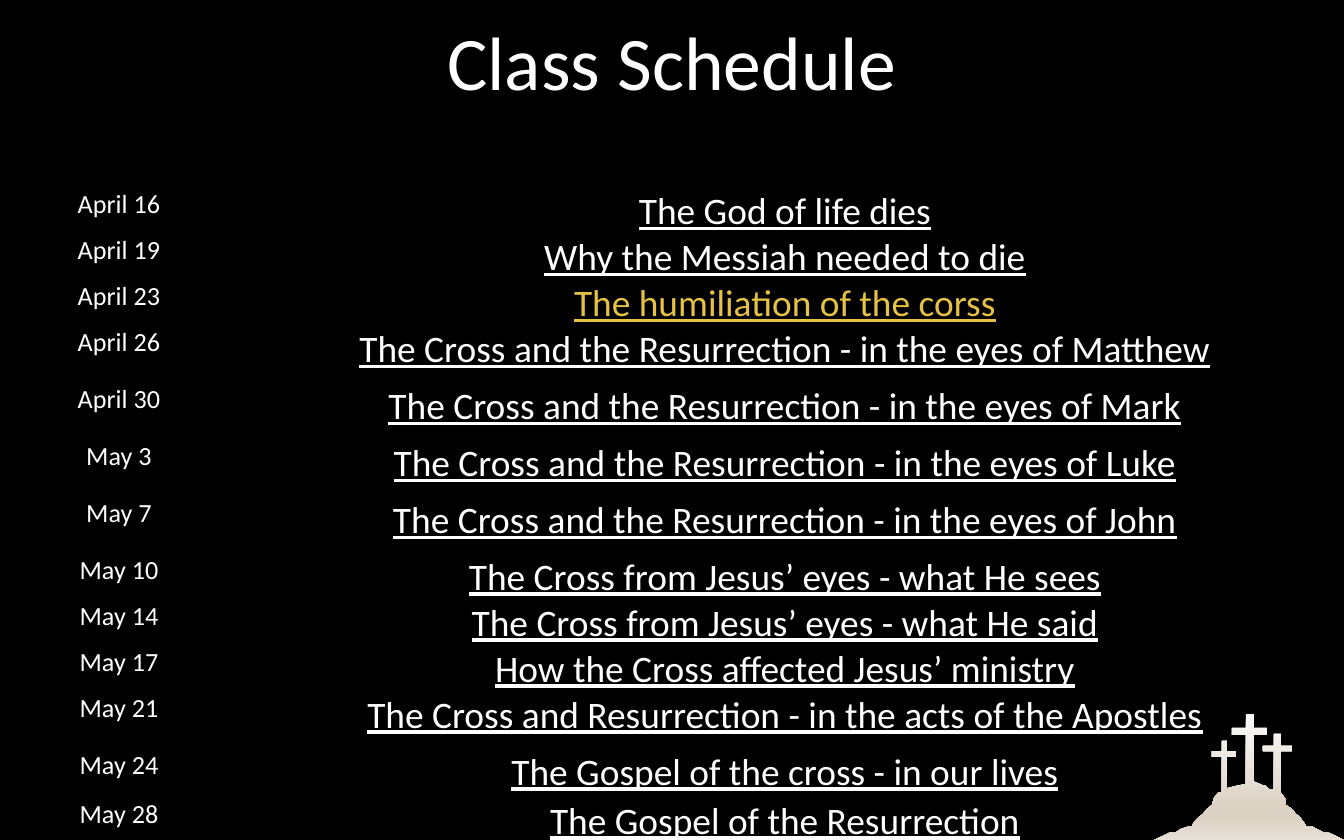
import pptx
import pptx.util
import pptx.dml.color
import pptx.enum.text
import pptx.oxml
import pptx.oxml.ns

PX = 914400 / 134.4
qn = pptx.oxml.ns.qn
NS = pptx.oxml.ns.nsdecls("a")
WHITE, BLACK, GOLD = "FFFFFF", "000000", "E5C243"


def rgb(value):
    return pptx.dml.color.RGBColor.from_string(value)


def write(tf, text, **font):
    p = tf.paragraphs[0]
    p.alignment = pptx.enum.text.PP_ALIGN.CENTER
    r = p.add_run()
    r.text = text
    r.font.color.rgb = rgb(font.pop("color", WHITE))
    for name, value in {"name": "Calibri", **font}.items():
        setattr(r.font, name, value)
    return p


prs = pptx.Presentation()
prs.slide_width, prs.slide_height = round(1344 * PX), round(840 * PX)
s = prs.slides.add_slide(prs.slide_layouts[6])
s.background.fill.solid()
s.background.fill.fore_color.rgb = rgb(BLACK)

tf = s.shapes.add_textbox(0, 0, prs.slide_width, round(132 * PX)).text_frame
tf.word_wrap = True
tf.vertical_anchor = pptx.enum.text.MSO_ANCHOR.MIDDLE
write(tf, "Class Schedule", size=pptx.util.Pt(40.5)).line_spacing = 0.9

TALL, SHORT, LAST = 57, 46, 49
rows = [
    (TALL, "", ""),
    (SHORT, "April 16", "The God of life dies"),
    (SHORT, "April 19", "Why the Messiah needed to die"),
    (SHORT, "April 23", "The humiliation of the corss"),
    (TALL, "April 26", "The Cross and the Resurrection - in the eyes of Matthew"),
    (TALL, "April 30", "The Cross and the Resurrection - in the eyes of Mark"),
    (TALL, "May 3", "The Cross and the Resurrection - in the eyes of Luke"),
    (TALL, "May 7", "The Cross and the Resurrection - in the eyes of John"),
    (SHORT, "May 10", "The Cross from Jesus’ eyes - what He sees"),
    (SHORT, "May 14", "The Cross from Jesus’ eyes - what He said"),
    (SHORT, "May 17", "How the Cross affected Jesus’ ministry"),
    (TALL, "May 21", "The Cross and Resurrection - in the acts of the Apostles"),
    (LAST, "May 24", "The Gospel of the cross - in our lives"),
    (LAST, "May 28", "The Gospel of the Resurrection"),
]
current = "April 23"
height = sum(row[0] for row in rows)
table = s.shapes.add_table(len(rows), 3, 0, round(132 * PX), prs.slide_width, round(height * PX)).table
table.first_row = table.horz_banding = False
for column, width in zip(table.columns, (238, 1094, 12)):
    column.width = round(width * PX)

margins = {"margin_left": 4, "margin_right": 4, "margin_top": 0, "margin_bottom": 0}
for i, (row_height, date, topic) in enumerate(rows):
    table.rows[i].height = round(row_height * PX)
    for cell in table.rows[i].cells:
        for name, value in margins.items():
            setattr(cell, name, round(value * PX))
        tcPr = cell._tc.get_or_add_tcPr()
        for side in ("lnL", "lnR", "lnT", "lnB"):
            tcPr.append(pptx.oxml.parse_xml(
                f'<a:{side} {NS} w="12700"><a:solidFill><a:srgbClr val="{BLACK}"/></a:solidFill></a:{side}>'))
        cell.fill.background()
    if date:
        write(table.cell(i, 0).text_frame, date, size=pptx.util.Pt(14))
        write(table.cell(i, 1).text_frame, topic, size=pptx.util.Pt(20), underline=True,
              color=GOLD if date == current else WHITE)

hill = [
    (1246, 714), (1246, 728), (1232, 728), (1232, 735), (1246, 735), (1246, 784), (1241, 785),
    (1236, 786), (1228, 788), (1227, 789), (1227, 757), (1236, 757), (1236, 751), (1227, 751),
    (1227, 741), (1222, 741), (1222, 751), (1212, 751), (1212, 757), (1222, 757), (1222, 792),
    (1218, 793), (1214, 798), (1212, 805), (1207, 809), (1203, 814), (1199, 817), (1196, 820),
    (1193, 824), (1192, 827), (1187, 827), (1181, 829), (1175, 833), (1169, 833), (1163, 836),
    (1154, 840), (1344, 840), (1336, 836), (1329, 833), (1324, 833), (1317, 829), (1313, 827),
    (1306, 827), (1305, 824), (1302, 820), (1300, 817), (1296, 814), (1292, 809), (1286, 805),
    (1285, 798), (1281, 793), (1281, 751), (1292, 751), (1292, 746), (1281, 746), (1281, 734),
    (1274, 734), (1274, 746), (1263, 746), (1263, 751), (1274, 751), (1274, 790), (1269, 789),
    (1266, 786), (1262, 785), (1255, 782), (1254, 782), (1254, 735), (1267, 735), (1267, 728),
    (1254, 728), (1254, 714),
]
fb = s.shapes.build_freeform(*hill[0], scale=PX)
fb.add_line_segments(hill[1:], close=True)
sp = fb.convert_to_shape()
sp.shadow.inherit = False
sp.line.fill.background()
sp.fill.gradient()
sp.fill.gradient_angle = 270
stops = sp._element.spPr.find(".//" + qn("a:gsLst"))
for stop in list(stops):
    stops.remove(stop)
for pos, color in ((0, "FBFAF9"), (74, "DCD2C4"), (83, "DCD2C4"), (100, "E8E1D8")):
    stops.append(pptx.oxml.parse_xml(f'<a:gs {NS} pos="{pos * 1000}"><a:srgbClr val="{color}"/></a:gs>'))

prs.save("out.pptx")
